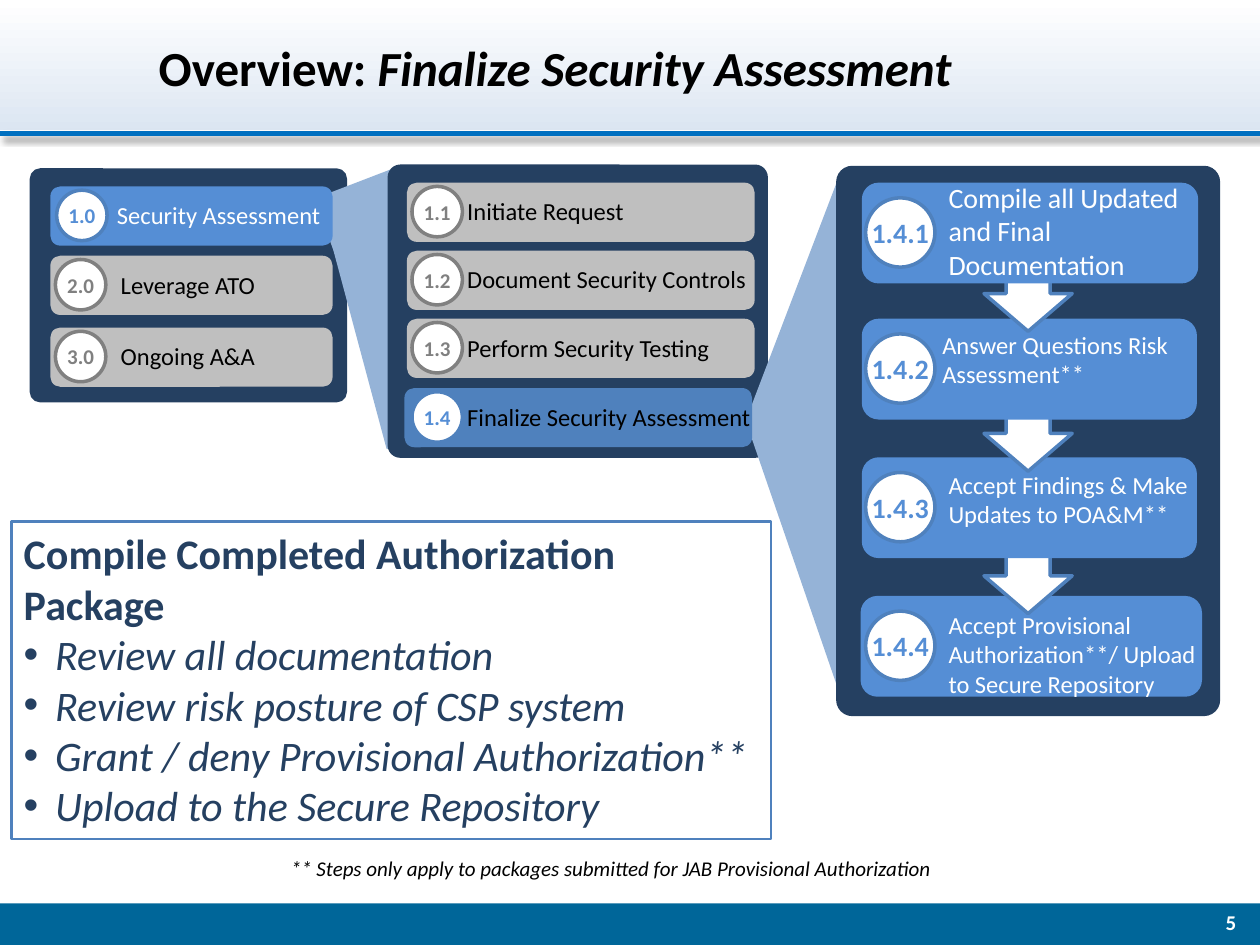
from dataclasses import dataclass

from lxml.etree import SubElement
from pptx import Presentation
from pptx.dml.color import RGBColor
from pptx.enum.shapes import MSO_CONNECTOR, MSO_SHAPE
from pptx.enum.text import MSO_ANCHOR, PP_ALIGN
from pptx.oxml.ns import qn
from pptx.util import Inches, Pt


@dataclass(frozen=True)
class Theme:
    """Colours, typeface and type sizes of the slide."""
    font: str = "Calibri"
    black: str = "000000"
    white: str = "FFFFFF"
    navy: str = "254061"
    blue: str = "558ED5"
    outline: str = "4F81BD"
    beam: str = "95B3D7"
    bar: str = "BFBFBF"
    ring: str = "808080"
    header: str = "DCE6F2"
    rule: str = "0070C0"
    footer: str = "006699"
    title: int = 28
    callout: int = 24
    step: int = 16
    label: int = 14
    small: int = 12


class ProcessSlide:
    """Draws the elements of a process overview on one slide."""

    def __init__(self, slide, theme):
        self.slide = slide
        self.theme = theme

    def style(self, paragraph, size, color, bold=False, italic=None, align=PP_ALIGN.LEFT):
        """Format a whole paragraph."""
        paragraph.alignment = align
        font = paragraph.font
        font.name, font.size = self.theme.font, Pt(size)
        font.bold, font.italic = bold, italic
        font.color.rgb = RGBColor.from_string(color)

    def shape(self, kind, box, fill, line=None, weight=2, rotation=0, corner=None):
        """Add a preset shape with a flat fill."""
        shape = self.slide.shapes.add_shape(kind, *map(Inches, box))
        shape.shadow.inherit = False
        shape.rotation = rotation
        shape.fill.solid()
        shape.fill.fore_color.rgb = RGBColor.from_string(fill)
        if line:
            shape.line.color.rgb = RGBColor.from_string(line)
            shape.line.width = Pt(weight)
        else:
            shape.line.fill.background()
        if corner is not None:
            shape.adjustments[0] = corner
        return shape

    def text(self, box, words, size, color, anchor=MSO_ANCHOR.TOP, **look):
        """Add a wrapping text box with one paragraph."""
        frame = self.slide.shapes.add_textbox(*map(Inches, box)).text_frame
        frame.word_wrap = True
        frame.vertical_anchor = anchor
        frame.text = words
        self.style(frame.paragraphs[0], size, color, **look)

    def title(self, box, lead, topic):
        """Place the title above the header band."""
        title = self.slide.shapes.title
        title.left, title.top, title.width, title.height = map(Inches, box)
        title.element.getparent().append(title.element)
        frame = title.text_frame
        frame.vertical_anchor = MSO_ANCHOR.MIDDLE
        paragraph = frame.paragraphs[0]
        paragraph.add_run().text = lead
        topic_run = paragraph.add_run()
        topic_run.text = topic
        topic_run.font.italic = True
        self.style(paragraph, self.theme.title, self.theme.black, bold=True)

    def chrome(self):
        """Add the header band, its shadowed rule and the footer band."""
        theme = self.theme
        header = self.shape(MSO_SHAPE.RECTANGLE, (0, 0, 10, 1.03), theme.header)
        header.fill.gradient()
        header.fill.gradient_angle = 90
        for stop, color in zip(header.fill.gradient_stops, (theme.header, theme.white)):
            stop.color.rgb = RGBColor.from_string(color)
        self.shape(MSO_SHAPE.RECTANGLE, (0, 7.17, 10, 0.33), theme.footer)
        rule = self.slide.shapes.add_connector(
            MSO_CONNECTOR.STRAIGHT, Inches(0), Inches(1.06), Inches(10), Inches(1.06))
        rule.line.color.rgb = RGBColor.from_string(theme.rule)
        rule.line.width = Pt(3)
        effects = SubElement(rule.element.spPr, qn("a:effectLst"))
        shadow = SubElement(effects, qn("a:outerShdw"), blurRad=str(Pt(4)),
                            dist=str(Pt(3)), dir="2700000", rotWithShape="0")
        tint = SubElement(shadow, qn("a:srgbClr"), val=theme.black)
        SubElement(tint, qn("a:alpha"), val="40000")

    def panel(self, box):
        """Add a dark rounded panel."""
        self.shape(MSO_SHAPE.ROUNDED_RECTANGLE, box, self.theme.navy, self.theme.navy, corner=0.038)

    def beam(self, box, rotation):
        """Add a tilted rectangle that links an item to its detail panel."""
        self.shape(MSO_SHAPE.RECTANGLE, box, self.theme.beam, rotation=rotation)

    def badge(self, box, number, size, color, ring):
        """Add a ringed circle holding a number."""
        circle = self.shape(MSO_SHAPE.OVAL, box, self.theme.white, ring)
        frame = circle.text_frame
        frame.word_wrap = False
        frame.margin_left = frame.margin_right = frame.margin_top = frame.margin_bottom = 0
        frame.vertical_anchor = MSO_ANCHOR.MIDDLE
        frame.text = number
        self.style(frame.paragraphs[0], size, color, bold=True, align=PP_ALIGN.CENTER)

    def item(self, left, top, width, badge_left, label_left, label_width,
             number, words, fill=None, color=None):
        """Add a numbered bar; a fill marks it as the selected one."""
        theme = self.theme
        self.shape(MSO_SHAPE.ROUNDED_RECTANGLE, (left, top, width, 0.47), fill or theme.bar)
        self.text((label_left, top + 0.06, label_width, 0.34), words, theme.label, color or theme.black)
        self.badge((badge_left, top + 0.03, 0.4, 0.4), number, theme.small,
                   theme.blue if fill else theme.ring, theme.outline if fill else theme.ring)

    def step(self, bar, label, number, words, size):
        """Add a large numbered step."""
        theme = self.theme
        self.shape(MSO_SHAPE.ROUNDED_RECTANGLE, bar, theme.blue)
        self.text(label, words, size, theme.white)
        self.badge((6.87, bar[1] + 0.12, 0.55, 0.55), number, theme.step, theme.blue, theme.outline)

    def arrow(self, top):
        """Add a down arrow between two steps."""
        self.shape(MSO_SHAPE.DOWN_ARROW, (7.81, top, 0.7, 0.6), self.theme.white, self.theme.outline)

    def callout(self, box, heading, points):
        """Add an outlined box with a heading and bulleted points."""
        theme = self.theme
        frame = self.shape(MSO_SHAPE.RECTANGLE, box, theme.white, theme.outline, 1.5).text_frame
        frame.word_wrap = True
        frame.vertical_anchor = MSO_ANCHOR.TOP
        frame.text = heading
        self.style(frame.paragraphs[0], theme.callout, theme.navy, bold=True)
        for point in points:
            paragraph = frame.add_paragraph()
            paragraph.text = point
            properties = paragraph._p.get_or_add_pPr()
            properties.set("marL", str(Inches(0.25)))
            properties.set("indent", str(Inches(-0.25)))
            SubElement(properties, qn("a:buFont"), typeface="Arial")
            SubElement(properties, qn("a:buChar"), char="•")
            self.style(paragraph, theme.callout, theme.navy, italic=True)


def main():
    """Build and save the slide."""
    theme = Theme()
    deck = Presentation()
    deck.slide_width, deck.slide_height = Inches(10), Inches(7.5)
    page = ProcessSlide(deck.slides.add_slide(deck.slide_layouts[5]), theme)

    page.chrome()
    page.title((1.16, 0.26, 8.59, 0.54), "Overview: ", "Finalize Security Assessment")
    page.text((7.61, 7.17, 2.3, 0.3), "5", theme.small, theme.white,
              MSO_ANCHOR.MIDDLE, bold=True, align=PP_ALIGN.RIGHT)

    page.panel((0.25, 1.35, 2.49, 1.83))
    page.beam((2.32, 2.18, 1.81, 0.81), 75)
    page.beam((2.51, 1.55, 0.97, 0.71), 69)
    page.panel((3.09, 1.32, 2.99, 2.3))
    page.beam((6.25, 1.47, 0.75, 2.14), 20.9)
    page.beam((5.6, 3.77, 2.46, 1.09), 71)
    page.panel((6.65, 1.33, 3.02, 4.34))

    page.item(0.4, 1.48, 2.24, 0.45, 0.83, 1.82, "1.0", "Security Assessment", theme.blue, theme.white)
    page.item(0.4, 2.03, 2.24, 0.44, 0.86, 1.82, "2.0", "Leverage ATO")
    page.item(0.4, 2.6, 2.24, 0.44, 0.86, 1.82, "3.0", "Ongoing A&A")

    requests = ("Initiate Request", "Document Security Controls", "Perform Security Testing")
    for index, request in enumerate(requests):
        page.item(3.23, 1.45 + 0.54 * index, 2.76, 3.27, 3.61, 2.91, f"1.{index + 1}", request)
    page.item(3.21, 3.08, 2.76, 3.27, 3.61, 2.91, "1.4", "Finalize Security Assessment", theme.outline)

    page.step((6.83, 4.73, 2.71, 0.8), (7.43, 4.79, 2.27, 0.81), "1.4.4",
              "Accept Provisional Authorization**/ Upload to Secure Repository", theme.label)
    page.arrow(4.27)
    page.step((6.84, 3.63, 2.66, 0.8), (7.43, 3.68, 2.23, 0.57), "1.4.3",
              "Accept Findings & Make Updates to POA&M**", theme.label)
    page.arrow(3.14)
    page.step((6.84, 2.53, 2.66, 0.8), (7.38, 2.57, 2.19, 0.57), "1.4.2",
              "Answer Questions Risk Assessment**", theme.label)
    page.arrow(2.03)
    page.step((6.84, 1.45, 2.67, 0.8), (7.43, 1.38, 2.13, 0.91), "1.4.1",
              "Compile all Updated and Final Documentation", theme.step)

    page.callout((0.09, 4.14, 6.03, 2.52), "Compile Completed Authorization Package",
                 ("Review all documentation", "Review risk posture of CSP system",
                  "Grant / deny Provisional Authorization**", "Upload to the Secure Repository"))
    page.text((0.15, 6.74, 9.4, 0.3),
              "** Steps only apply to packages submitted for JAB Provisional Authorization",
              theme.small, theme.black, italic=True, align=PP_ALIGN.CENTER)
    deck.save("out.pptx")


if __name__ == "__main__":
    main()
